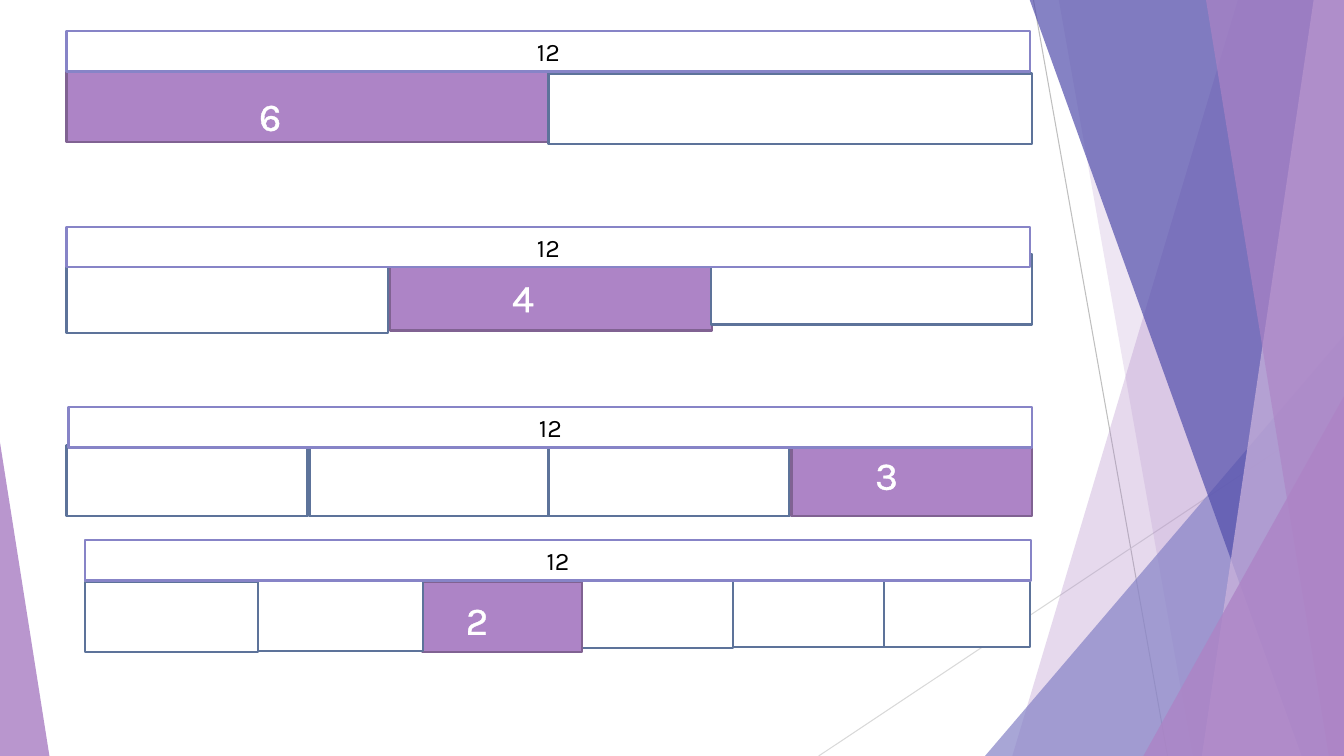
from lxml.etree import SubElement
from pptx import Presentation
from pptx.dml.color import RGBColor
from pptx.enum.shapes import MSO_CONNECTOR, MSO_SHAPE
from pptx.enum.text import MSO_ANCHOR, MSO_AUTO_SIZE, PP_ALIGN
from pptx.oxml import parse_xml
from pptx.oxml.ns import qn
from pptx.util import Inches, Pt

WIDTH, HEIGHT = 13.33, 7.5
BAR_HEIGHT, CELL_HEIGHT = 0.4, 0.7
WHITE, BLACK, PURPLE, LAVENDER = "FFFFFF", "000000", "AD84C6", "8784C7"
PURPLE_EDGE, BLUE_EDGE = "806292", "5D739A"

THIN_LINES = [
    ((10.25, 0), (11.58, HEIGHT), "BFBFBF"),
    ((WIDTH, 4.03), (8.12, HEIGHT), "D9D9D9"),
]
# top-left x, bottom-left x, colour, opacity
BANDS_BEHIND = [(12.28, 10.04, PURPLE, 30), (10.5, 11.83, PURPLE, 20)]
BANDS_FRONT = [(10.21, 12.91, "524EAB", 70), (13.03, 11.92, "CEB5DD", 70),
               (11.96, 13.18, PURPLE, 65)]
# left, top, width, apex, colour, opacity
TRIANGLE_MIDDLE = [(9.77, 3.33, 3.56, 1, LAVENDER, 72)]
TRIANGLES_FRONT = [(11.34, 3.93, 1.99, 1, PURPLE, 80), (0, 4.39, 0.49, 0, PURPLE, 85)]

# cells are (left, top, width), drawn in the listed order
BAR_MODELS = [
    {"bar": (0.66, 0.31, 9.56), "shaded": 0, "answer": ("6", 2.47, 0.86),
     "cells": [(0.66, 0.71, 4.78), (5.44, 0.73, 4.8)]},
    {"bar": (0.66, 2.25, 9.56), "shaded": 1, "answer": ("4", 4.98, 2.66),
     "cells": [(0.66, 2.6, 3.19), (3.87, 2.58, 3.19), (7.05, 2.52, 3.19)]},
    {"bar": (0.68, 4.04, 9.56), "shaded": 3, "answer": ("3", 8.58, 4.42),
     "cells": [(left, 4.42, 2.39) for left in (0.66, 3.07, 5.44, 7.85)]},
    {"bar": (0.84, 5.36, 9.39), "shaded": 3, "answer": ("2", 4.52, 5.86),
     "cells": [(8.72, 5.72, 1.5), (7.27, 5.72, 1.5), (5.77, 5.73, 1.5),
               (4.19, 5.77, 1.58), (2.53, 5.76, 1.67), (0.84, 5.77, 1.72)]},
]

presentation = Presentation()
presentation.slide_width, presentation.slide_height = Inches(WIDTH), Inches(HEIGHT)
slide = presentation.slides.add_slide(presentation.slide_layouts[6])
shapes = slide.shapes


def color(value):
    return RGBColor.from_string(value)


def paint(shape, fill, edge=None, opacity=100):
    shape.shadow.inherit = False
    shape.fill.solid()
    shape.fill.fore_color.rgb = color(fill)
    if opacity < 100:
        tint = shape.fill._xPr.find(qn("a:solidFill"))[0]
        SubElement(tint, qn("a:alpha")).set("val", str(opacity * 1000))
    if edge:
        shape.line.color.rgb = color(edge)
        shape.line.width = Pt(1.5)
    else:
        shape.line.fill.background()


def write(shape, text, size, ink, align=PP_ALIGN.LEFT, anchor=MSO_ANCHOR.TOP, outline=None):
    frame = shape.text_frame
    frame.word_wrap = True
    frame.auto_size = MSO_AUTO_SIZE.SHAPE_TO_FIT_TEXT
    frame.vertical_anchor = anchor
    paragraph = frame.paragraphs[0]
    paragraph.alignment = align
    run = paragraph.add_run()
    run.text = text
    run.font.name = "Karla"
    run.font.size = Pt(size)
    run.font.color.rgb = color(ink)
    if outline:
        run.font._element.insert(0, parse_xml(
            '<a:ln xmlns:a="http://schemas.openxmlformats.org/drawingml/2006/main" w="18415">'
            f'<a:solidFill><a:srgbClr val="{outline}"/></a:solidFill></a:ln>'))


def add_rectangle(left, top, width, height, fill, edge):
    rectangle = shapes.add_shape(MSO_SHAPE.RECTANGLE, Inches(left), Inches(top),
                                 Inches(width), Inches(height))
    paint(rectangle, fill, edge)
    return rectangle


def add_bands(bands):
    for top_left, bottom_left, fill, opacity in bands:
        builder = shapes.build_freeform(Inches(top_left), Inches(-0.01))
        corners = [(WIDTH, -0.01), (WIDTH, HEIGHT), (bottom_left, HEIGHT)]
        builder.add_line_segments([(Inches(x), Inches(y)) for x, y in corners], close=True)
        paint(builder.convert_to_shape(), fill, opacity=opacity)


def add_triangles(triangles):
    for left, top, width, apex, fill, opacity in triangles:
        triangle = shapes.add_shape(MSO_SHAPE.ISOSCELES_TRIANGLE, Inches(left), Inches(top),
                                    Inches(width), Inches(HEIGHT - top))
        triangle.adjustments[0] = apex
        paint(triangle, fill, opacity=opacity)


for start, end, ink in THIN_LINES:
    connector = shapes.add_connector(MSO_CONNECTOR.STRAIGHT,
                                     *[Inches(value) for value in start + end])
    connector.line.color.rgb = color(ink)
    connector.line.width = Pt(0.75)
    SubElement(connector._element.spPr, qn("a:effectLst"))

add_bands(BANDS_BEHIND)
add_triangles(TRIANGLE_MIDDLE)
add_bands(BANDS_FRONT)
add_triangles(TRIANGLES_FRONT)

for model in BAR_MODELS:
    for index, cell in enumerate(model["cells"]):
        shaded = index == model["shaded"]
        add_rectangle(*cell, CELL_HEIGHT, PURPLE if shaded else WHITE,
                      PURPLE_EDGE if shaded else BLUE_EDGE)
    bar = add_rectangle(*model["bar"], BAR_HEIGHT, WHITE, LAVENDER)
    write(bar, "12", 18, BLACK, align=PP_ALIGN.CENTER, anchor=MSO_ANCHOR.MIDDLE)
    answer, left, top = model["answer"]
    label = shapes.add_textbox(Inches(left), Inches(top), Inches(0.92), Inches(0.57))
    write(label, answer, 28, WHITE, outline=WHITE)

presentation.save("out.pptx")
